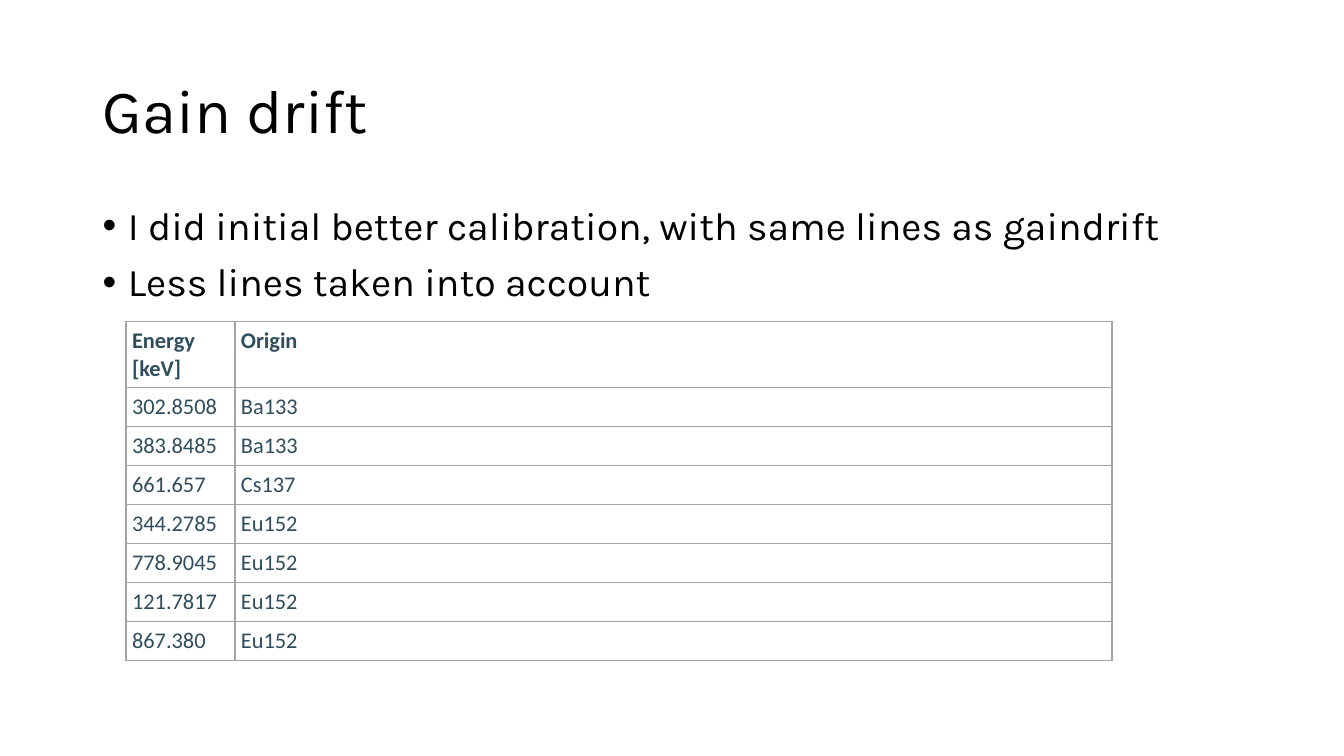
"""Builds the gain drift slide with its list of calibration lines."""
from dataclasses import dataclass

from lxml import etree
from pptx import Presentation
from pptx.dml.color import RGBColor
from pptx.enum.text import MSO_ANCHOR, PP_ALIGN
from pptx.oxml.ns import qn
from pptx.util import Inches, Pt

LEFT = PP_ALIGN.LEFT
TOP = MSO_ANCHOR.TOP
MIDDLE = MSO_ANCHOR.MIDDLE
COLORS = {"text": "000000", "table": "2F4D5D", "border": "A3A3A3", "paper": "FFFFFF"}
COLUMN_WIDTHS = (1.08, 8.7)
HEADER_HEIGHT = 0.65
LINE_HEIGHT = 0.38
CELL_INSET = 0.06


@dataclass(frozen=True)
class TextBlock:
    top: float
    height: float
    lines: tuple[str, ...]
    size: int
    anchor: MSO_ANCHOR
    bulleted: bool = False


@dataclass(frozen=True)
class SpectralLine:
    energy: str
    origin: str


BLOCKS = (
    TextBlock(0.4, 1.45, ("Gain drift",), 44, MIDDLE),
    TextBlock(2, 4.76, (
        "I did initial better calibration, with same lines as gaindrift",
        "Less lines taken into account",
    ), 28, TOP, bulleted=True),
)
HEADER = SpectralLine("Energy [keV]", "Origin")
SPECTRAL_LINES = (
    SpectralLine("302.8508", "Ba133"),
    SpectralLine("383.8485", "Ba133"),
    SpectralLine("661.657", "Cs137"),
    SpectralLine("344.2785", "Eu152"),
    SpectralLine("778.9045", "Eu152"),
    SpectralLine("121.7817", "Eu152"),
    SpectralLine("867.380", "Eu152"),
)


def style_font(font, name: str, size: int, color: str, bold: bool = False) -> None:
    font.name = name
    font.size = Pt(size)
    font.bold = bold
    font.color.rgb = RGBColor.from_string(COLORS[color])


def add_bullet(paragraph) -> None:
    properties = paragraph._p.get_or_add_pPr()
    properties.set("marL", str(Inches(0.25)))
    properties.set("indent", str(Inches(-0.25)))
    etree.SubElement(properties, qn("a:buFont")).set("typeface", "Arial")
    etree.SubElement(properties, qn("a:buChar")).set("char", "•")


def draw_block(slide, block: TextBlock) -> None:
    frame = slide.shapes.add_textbox(
        Inches(0.92), Inches(block.top), Inches(11.5), Inches(block.height)
    ).text_frame
    frame.word_wrap = True
    frame.vertical_anchor = block.anchor
    frame.text = "\n".join(block.lines)
    for paragraph in frame.paragraphs:
        paragraph.alignment = LEFT
        paragraph.line_spacing = 0.9
        if block.bulleted:
            paragraph.space_before = Pt(10)
            add_bullet(paragraph)
        style_font(paragraph.runs[0].font, "Karla", block.size, "text")


def add_borders(cell) -> None:
    properties = cell._tc.get_or_add_tcPr()
    for position, side in enumerate(("a:lnL", "a:lnR", "a:lnT", "a:lnB")):
        border = etree.Element(qn(side), w=str(Pt(1)))
        fill = etree.SubElement(border, qn("a:solidFill"))
        etree.SubElement(fill, qn("a:srgbClr")).set("val", COLORS["border"])
        properties.insert(position, border)


def draw_cell(cell, content: str, bold: bool) -> None:
    cell.text_frame.text = content
    cell.vertical_anchor = TOP
    cell.margin_left = cell.margin_right = Inches(CELL_INSET)
    cell.margin_top = cell.margin_bottom = Inches(CELL_INSET)
    cell.fill.solid()
    cell.fill.fore_color.rgb = RGBColor.from_string(COLORS["paper"])
    style_font(cell.text_frame.paragraphs[0].runs[0].font, "Calibri", 16, "table", bold)
    add_borders(cell)


def draw_table(slide, spectral_lines: tuple[SpectralLine, ...]) -> None:
    entries = (HEADER, *spectral_lines)
    table = slide.shapes.add_table(
        len(entries), len(COLUMN_WIDTHS), Inches(1.25), Inches(3.19),
        Inches(sum(COLUMN_WIDTHS)),
        Inches(HEADER_HEIGHT + LINE_HEIGHT * len(spectral_lines)),
    ).table
    table.horz_banding = False
    for column, width in zip(table.columns, COLUMN_WIDTHS):
        column.width = Inches(width)
    for index, entry in enumerate(entries):
        is_header = index == 0
        table.rows[index].height = Inches(HEADER_HEIGHT if is_header else LINE_HEIGHT)
        for column_index, content in enumerate((entry.energy, entry.origin)):
            draw_cell(table.cell(index, column_index), content, is_header)


def main() -> None:
    deck = Presentation()
    deck.slide_width = Inches(13.33)
    deck.slide_height = Inches(7.5)
    slide = deck.slides.add_slide(deck.slide_layouts[6])
    for block in BLOCKS:
        draw_block(slide, block)
    draw_table(slide, SPECTRAL_LINES)
    deck.save("out.pptx")


if __name__ == "__main__":
    main()
